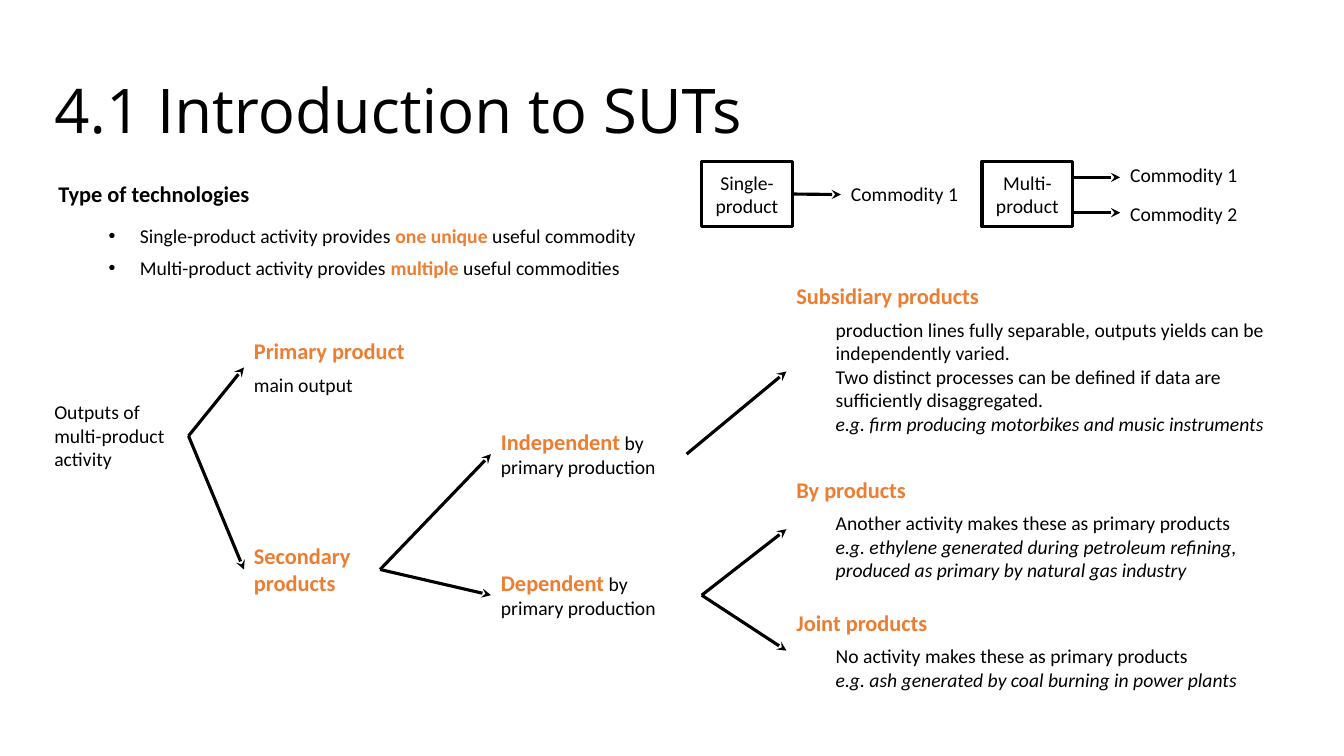
"""Build the slide on single-product and multi-product technologies."""
import lxml.etree
import pptx
import pptx.dml.color
import pptx.enum.shapes
import pptx.enum.text
import pptx.oxml
import pptx.oxml.ns
import pptx.util

Inches = pptx.util.Inches
Pt = pptx.util.Pt
qn = pptx.oxml.ns.qn
BLACK = pptx.dml.color.RGBColor(0x00, 0x00, 0x00)
ORANGE = pptx.dml.color.RGBColor(0xED, 0x7D, 0x31)

STYLES = {
    "heading": {"size": Pt(16), "bold": True, "color": ORANGE},
    "title": {"size": Pt(16), "bold": True, "color": BLACK},
    "body": {"size": Pt(14), "bold": False, "color": BLACK},
    "strong": {"size": Pt(14), "bold": True, "color": ORANGE},
    "example": {"size": Pt(14), "bold": False, "italic": True, "color": BLACK},
}
PLAIN = {}
DETAIL = {"space": 6}
INDENTED = {"space": 6, "indent": 0.39}


def write_paragraph(paragraph, runs, layout):
    """Write styled runs, turning line feeds into line breaks."""
    properties = paragraph._p.get_or_add_pPr()
    if "bullet" in layout:
        paragraph.level = 1
        properties.set("marL", str(Inches(0.81)))
        properties.set("indent", str(Inches(-0.31)))
        color = lxml.etree.SubElement(properties, qn("a:buClr"))
        lxml.etree.SubElement(color, qn("a:srgbClr"), val=str(BLACK))
        lxml.etree.SubElement(properties, qn("a:buFont"), typeface="Arial")
        lxml.etree.SubElement(properties, qn("a:buChar"), char=layout["bullet"])
    if "indent" in layout:
        properties.set("marL", str(Inches(layout["indent"])))
        properties.set("indent", "0")
    if "space" in layout:
        paragraph.space_before = Pt(layout["space"])
    for text, style in runs:
        for number, line in enumerate(text.split("\n")):
            if number:
                paragraph.add_line_break()
                lxml.etree.SubElement(paragraph._p[-1], qn("a:rPr"), sz="1400")
            if line:
                run = paragraph.add_run()
                run.text = line
                run.font.name = "Calibri"
                for key, value in STYLES[style].items():
                    if key == "color":
                        run.font.color.rgb = value
                    else:
                        setattr(run.font, key, value)


def add_arrow(start, end):
    """Add a black arrow between two points and return it."""
    arrow = slide.shapes.add_connector(
        pptx.enum.shapes.MSO_CONNECTOR.STRAIGHT, *map(Inches, start + end))
    arrow.line.color.rgb = BLACK
    arrow.line.width = Pt(2.25)
    lxml.etree.SubElement(arrow.line._get_or_add_ln(), qn("a:tailEnd"), type="stealth")
    lxml.etree.SubElement(arrow._element.spPr, qn("a:effectLst"))
    return arrow


presentation = pptx.Presentation()
presentation.slide_width = Inches(13.33)
presentation.slide_height = Inches(7.5)
slide = presentation.slides.add_slide(presentation.slide_layouts[5])

title = slide.shapes.title
placement = {"left": 0.44, "top": 0.01, "width": 11.33, "height": 1.5}
for key, value in placement.items():
    setattr(title, key, Inches(value))
title.text_frame.text = "4.1 Introduction to SUTs"
title.text_frame.auto_size = pptx.enum.text.MSO_AUTO_SIZE.NONE
title.text_frame.vertical_anchor = pptx.enum.text.MSO_ANCHOR.BOTTOM
heading = title.text_frame.paragraphs[0]
heading.alignment = pptx.enum.text.PP_ALIGN.LEFT
heading.line_spacing = 0.9
heading_font = heading.runs[0].font
for key, value in {"name": "Open Sans", "size": Pt(44)}.items():
    setattr(heading_font, key, value)
heading_font.color.rgb = BLACK

TEXTS = {
    "technologies": ((0.48, 1.74, 6.84, 1.09), [
        (PLAIN, [("Type of technologies", "title")]),
        ({"space": 12, "bullet": "•"}, [
            ("Single-product activity provides ", "body"),
            ("one unique ", "strong"), ("useful commodity", "body")]),
        ({"space": 6, "bullet": "•"}, [
            ("Multi-product activity provides ", "body"),
            ("multiple", "strong"), (" useful commodities", "body")])]),
    "outputs": ((0.44, 3.92, 1.43, 0.81), [
        (PLAIN, [("Outputs of multi-product activity", "body")])]),
    "primary": ((2.42, 3.3, 1.71, 0.69), [
        (PLAIN, [("Primary product", "heading")]),
        (DETAIL, [("main output", "body")])]),
    "secondary": ((2.42, 5.33, 1.35, 0.64), [
        (PLAIN, [("Secondary products", "heading")])]),
    "independent": ((4.87, 4.2, 1.94, 0.61), [
        (PLAIN, [("Independent", "heading"), (" by primary production", "body")])]),
    "dependent": ((4.87, 5.6, 2.09, 0.61), [
        (PLAIN, [("Dependent", "heading"), (" by primary production", "body")])]),
    "subsidiary": ((7.8, 2.75, 5.29, 1.87), [
        (PLAIN, [("Subsidiary products", "heading")]),
        (INDENTED, [
            ("production lines fully separable, outputs yields can be independently "
             "varied.\nTwo distinct processes can be defined if data are sufficiently "
             "disaggregated.\n", "body"),
            ("e.g. firm producing motorbikes and music instruments", "example")])]),
    "by": ((7.8, 4.67, 5.29, 1.16), [
        (PLAIN, [("By products", "heading")]),
        (INDENTED, [
            ("Another activity makes these as primary products\n", "body"),
            ("e.g. ethylene generated during petroleum refining, produced as primary "
             "by natural gas industry", "example")])]),
    "joint": ((7.8, 5.99, 5.38, 0.93), [
        (PLAIN, [("Joint products", "heading")]),
        (INDENTED, [
            ("No activity makes these as primary products\n", "body"),
            ("e.g. ash generated by coal burning in power plants", "example")])]),
    "single commodity": ((8.34, 1.76, 1.32, 0.34), [(PLAIN, [("Commodity 1", "body")])]),
    "first commodity": ((11.11, 1.57, 1.4, 0.34), [(PLAIN, [("Commodity 1", "body")])]),
    "second commodity": ((11.11, 1.95, 1.4, 0.34), [(PLAIN, [("Commodity 2", "body")])]),
}
boxes = {}
for name, (position, paragraphs) in TEXTS.items():
    box = slide.shapes.add_textbox(*map(Inches, position))
    frame = box.text_frame
    frame.word_wrap = True
    frame.auto_size = pptx.enum.text.MSO_AUTO_SIZE.SHAPE_TO_FIT_TEXT
    for number, (layout, runs) in enumerate(paragraphs):
        paragraph = frame.add_paragraph() if number else frame.paragraphs[0]
        write_paragraph(paragraph, runs, layout)
    boxes[name] = box

for name, left in (("Single-product", 6.96), ("Multi-product", 9.74)):
    activity = slide.shapes.add_shape(
        pptx.enum.shapes.MSO_SHAPE.RECTANGLE,
        Inches(left), Inches(1.6), Inches(0.9), Inches(0.65))
    activity.shadow.inherit = False
    activity.fill.background()
    activity.line.color.rgb = BLACK
    activity.line.width = Pt(2.25)
    activity.text_frame.word_wrap = True
    activity.text_frame.vertical_anchor = pptx.enum.text.MSO_ANCHOR.MIDDLE
    paragraph = activity.text_frame.paragraphs[0]
    paragraph.alignment = pptx.enum.text.PP_ALIGN.CENTER
    write_paragraph(paragraph, [(name, "body")], PLAIN)
    boxes[name] = activity

LINKS = [
    ("outputs", "primary"), ("outputs", "secondary"),
    ("secondary", "independent"), ("secondary", "dependent"),
    ("independent", "subsidiary"), ("dependent", "by"), ("dependent", "joint"),
    ("Single-product", "single commodity"),
]
for source, target in LINKS:
    arrow = add_arrow((0, 0), (1, 1))
    arrow.begin_connect(boxes[source], 3)
    arrow.end_connect(boxes[target], 1)

for height in (1.76, 2.11):
    add_arrow((10.64, height), (11.11, height))

presentation.save("out.pptx")
